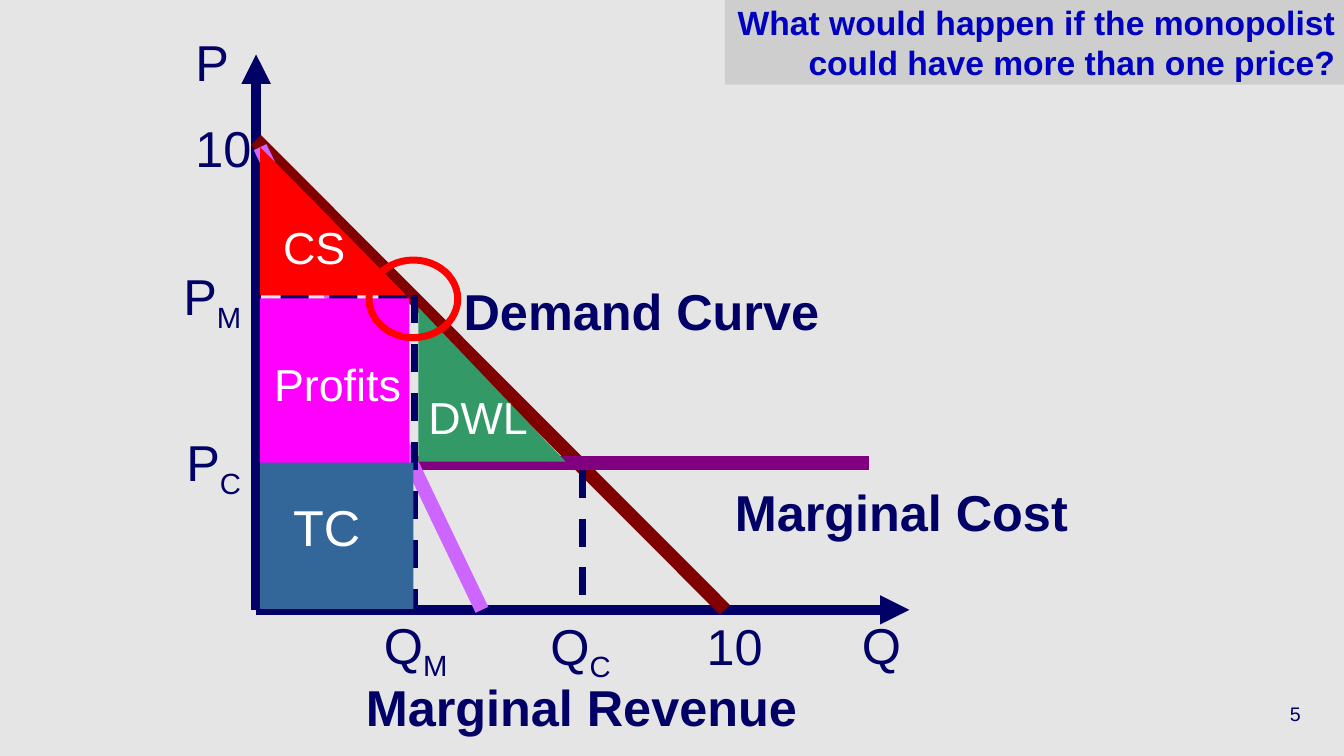
import pptx
import pptx.util
import pptx.dml.color
import pptx.enum.dml
import pptx.enum.shapes
import pptx.enum.text
import pptx.oxml.ns
from lxml import etree
from pptx.dml.color import RGBColor
from pptx.util import Inches

BACKGROUND = RGBColor(0xE5, 0xE5, 0xE5)
TITLE_FILL = RGBColor(0xCE, 0xCE, 0xCE)
TITLE_BLUE = RGBColor(0x00, 0x00, 0xC0)
NAVY = RGBColor(0x00, 0x00, 0x66)
MAROON = RGBColor(0x80, 0x00, 0x00)
PURPLE = RGBColor(0x80, 0x00, 0x80)
LILAC = RGBColor(0xCC, 0x66, 0xFF)
RED = RGBColor(0xFF, 0x00, 0x00)
MAGENTA = RGBColor(0xFF, 0x00, 0xFF)
GREEN = RGBColor(0x33, 0x99, 0x66)
STEEL = RGBColor(0x33, 0x66, 0x99)
WHITE = RGBColor(0xFF, 0xFF, 0xFF)

SHAPE = pptx.enum.shapes.MSO_SHAPE
ANCHOR = pptx.enum.text.MSO_ANCHOR
ALIGN = pptx.enum.text.PP_ALIGN

ORIGIN_X, ORIGIN_Y = 2.54, 6.05
AREA_LEFT = 2.58
COST_Y = 4.59


def add_text(s, text, left, top, width, height=0.71, size=36, color=NAVY,
             bold=False, subscript="", align=ALIGN.LEFT, anchor=ANCHOR.TOP,
             wrap=False):
    sp = s.shapes.add_textbox(*map(Inches, (left, top, width, height)))
    tf = sp.text_frame
    tf.word_wrap = wrap
    tf.vertical_anchor = anchor
    p = tf.paragraphs[0]
    p.text = text
    p.alignment = align
    if subscript:
        r = p.add_run()
        r.text = subscript
        r.font._element.set("baseline", "-25000")
    for r in p.runs:
        r.font.name = "Arial"
        r.font.size = pptx.util.Pt(size)
        r.font.bold = bold
        r.font.color.rgb = color
    return sp


def add_line(s, x1, y1, x2, y2, color, weight, dashed=False, arrow=False):
    sp = s.shapes.add_connector(pptx.enum.shapes.MSO_CONNECTOR.STRAIGHT,
                                *map(Inches, (x1, y1, x2, y2)))
    sp.line.color.rgb = color
    sp.line.width = pptx.util.Pt(weight)
    if dashed:
        sp.line.dash_style = pptx.enum.dml.MSO_LINE.DASH
    if arrow:
        tail = etree.SubElement(sp.line._get_or_add_ln(),
                                pptx.oxml.ns.qn("a:tailEnd"))
        tail.set("type", "triangle")
    etree.SubElement(sp._element.spPr, pptx.oxml.ns.qn("a:effectLst"))


def add_area(s, kind, left, top, width, height, color):
    sp = s.shapes.add_shape(kind, *map(Inches, (left, top, width, height)))
    sp.shadow.inherit = False
    sp.fill.solid()
    sp.fill.fore_color.rgb = color
    sp.line.fill.background()


def add_ring(s, left, top, width, height):
    sp = s.shapes.add_shape(SHAPE.OVAL,
                            *map(Inches, (left, top, width, height)))
    sp.shadow.inherit = False
    sp.fill.background()
    sp.line.color.rgb = RED
    sp.line.width = pptx.util.Pt(5)


def add_title(s):
    sp = add_text(s, "What would happen if the monopolist could have more "
                  "than one price?", 7.19, 0, 6.15, 0.84, 24, TITLE_BLUE,
                  bold=True, align=ALIGN.RIGHT, anchor=ANCHOR.MIDDLE, wrap=True)
    sp.fill.solid()
    sp.fill.fore_color.rgb = TITLE_FILL


def add_axes(s):
    add_line(s, ORIGIN_X, ORIGIN_Y, 9.02, ORIGIN_Y, NAVY, 7, arrow=True)
    add_line(s, ORIGIN_X, ORIGIN_Y, ORIGIN_X, 0.54, NAVY, 7, arrow=True)
    add_text(s, "P", 1.84, 0.26, 0.84, wrap=True)
    add_text(s, "Q", 8.45, 6.04, 0.6)
    add_text(s, "10", 1.84, 1.11, 0.76)
    add_text(s, "10", 6.91, 6.05, 0.77)
    add_text(s, "Q", 5.36, 6.05, 0.84, subscript="C")
    add_text(s, "P", 1.75, 4.23, 0.78, subscript="C")
    add_text(s, "Q", 3.71, 6.04, 0.88, subscript="M")
    add_text(s, "P", 1.72, 2.58, 0.82, subscript="M")


def add_curves(s):
    add_line(s, ORIGIN_X, 1.39, 7.19, ORIGIN_Y, MAROON, 10)
    add_line(s, 2.6, COST_Y, 8.62, COST_Y, PURPLE, 10)
    add_line(s, 5.78, 4.66, 5.78, 6.04, NAVY, 5, dashed=True)
    add_line(s, AREA_LEFT, 1.46, 4.78, ORIGIN_Y, LILAC, 10)
    add_line(s, 4.11, 2.93, 4.11, 6.04, NAVY, 5, dashed=True)
    add_line(s, 4.03, 2.94, AREA_LEFT, 2.93, NAVY, 5, dashed=True)
    add_text(s, "Demand Curve", 4.5, 2.73, 3.97, bold=True, wrap=True)
    add_text(s, "Marginal Cost", 7.19, 4.72, 3.54, bold=True)
    add_text(s, "Marginal Revenue", 3.53, 6.66, 4.52, bold=True)


def add_welfare_areas(s):
    add_area(s, SHAPE.RIGHT_TRIANGLE, AREA_LEFT, 1.46, 1.45, 1.47, RED)
    add_area(s, SHAPE.RECTANGLE, AREA_LEFT, 2.96, 1.48, 1.69, MAGENTA)
    add_area(s, SHAPE.RIGHT_TRIANGLE, 4.15, 3.05, 1.46, 1.53, GREEN)
    add_area(s, SHAPE.RECTANGLE, AREA_LEFT, COST_Y, 1.52, 1.45, STEEL)
    add_text(s, "CS", 2.71, 2.13, 0.83, 0.64, 32, WHITE)
    add_text(s, "Profits", 2.62, 3.49, 1.47, 0.64, 32, WHITE)
    add_text(s, "DWL", 4.15, 3.82, 1.2, 0.64, 32, WHITE)
    add_text(s, "TC", 2.81, 4.87, 0.87, color=WHITE)


def main():
    prs = pptx.Presentation()
    prs.slide_width, prs.slide_height = Inches(13.33), Inches(7.5)
    s = prs.slides.add_slide(prs.slide_layouts[6])
    s.background.fill.solid()
    s.background.fill.fore_color.rgb = BACKGROUND
    add_title(s)
    add_text(s, "5", 10.22, 6.83, 2.78, 0.5, 14, align=ALIGN.RIGHT,
             anchor=ANCHOR.MIDDLE, wrap=True)
    add_axes(s)
    add_curves(s)
    add_welfare_areas(s)
    add_ring(s, 3.66, 2.58, 0.88, 0.77)
    prs.save("out.pptx")


if __name__ == "__main__":
    main()
